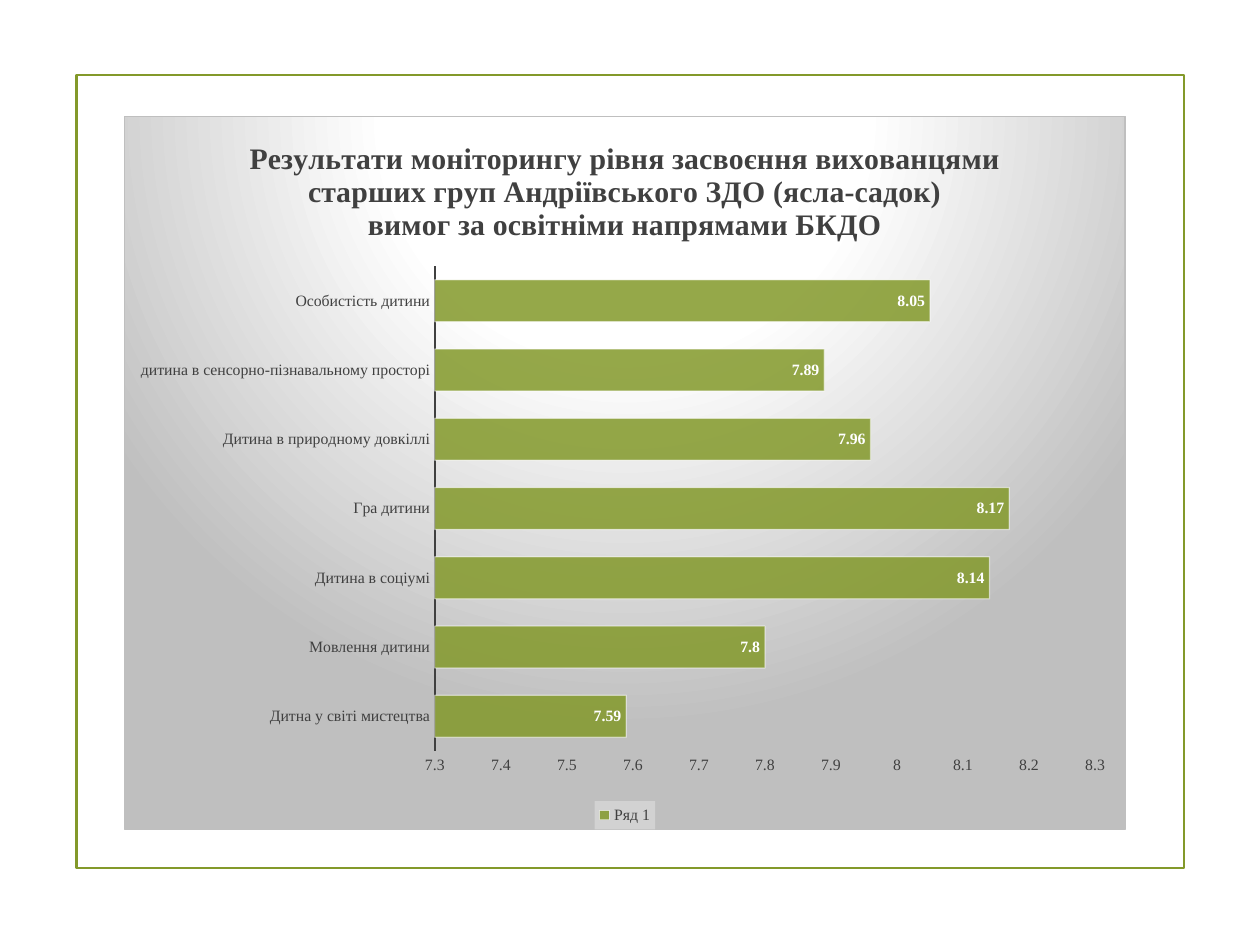
from dataclasses import dataclass

from lxml import etree
from pptx import Presentation
from pptx.chart.data import CategoryChartData
from pptx.dml.color import RGBColor
from pptx.enum.chart import XL_CHART_TYPE, XL_LABEL_POSITION, XL_LEGEND_POSITION, XL_TICK_MARK
from pptx.enum.shapes import MSO_SHAPE
from pptx.oxml import parse_xml
from pptx.oxml.ns import nsdecls, qn
from pptx.util import Pt

BAR = XL_CHART_TYPE.BAR_CLUSTERED
INSIDE_END = XL_LABEL_POSITION.INSIDE_END
BOTTOM = XL_LEGEND_POSITION.BOTTOM
NO_TICK = XL_TICK_MARK.NONE
RECTANGLE = MSO_SHAPE.RECTANGLE


@dataclass(frozen=True)
class Theme:
    font: str = "Times New Roman"
    green: str = "83992A"
    text: str = "404040"
    white: str = "FFFFFF"
    grey: str = "BFBFBF"
    legend: str = "F2F2F2"
    title_size: float = 17
    label_size: float = 9


THEME = Theme()

TITLE = (
    "Результати моніторингу рівня засвоєння вихованцями "
    "старших груп Андріївського ЗДО (ясла-садок)",
    "вимог за освітніми напрямами БКДО",
)
RESULTS = {
    "Дитна у світі мистецтва": 7.59,
    "Мовлення дитини": 7.8,
    "Дитина в соціумі": 8.14,
    "Гра дитини": 8.17,
    "Дитина в природному довкіллі": 7.96,
    "дитина в сенсорно-пізнавальному просторі": 7.89,
    "Особистість дитини": 8.05,
}


def style_text(target, text=None, size=THEME.label_size, color=THEME.text, bold=False):
    """Format anything with a font; when text is given, add it as a run first."""
    if text is not None:
        target = target.add_run()
        target.text = text
    font = target.font
    font.name = THEME.font
    font.size = Pt(size)
    font.bold = bold
    font.color.rgb = RGBColor.from_string(color)


def set_alpha(fill_parent, percent):
    color = next(fill_parent.iter(qn("a:srgbClr")))
    etree.SubElement(color, qn("a:alpha")).set("val", str(percent * 1000))


presentation = Presentation()
presentation.slide_width, presentation.slide_height = Pt(720), Pt(540)
slide = presentation.slides.add_slide(presentation.slide_layouts[6])

# Green border around the slide
border = slide.shapes.add_shape(RECTANGLE, Pt(43.7), Pt(42.8), Pt(633), Pt(453.3))
border.shadow.inherit = False
border.fill.background()
border.line.color.rgb = RGBColor.from_string(THEME.green)
border.line.width = Pt(1.25)

# Chart of monitoring results
data = CategoryChartData()
data.categories = list(RESULTS)
data.add_series("Ряд 1", list(RESULTS.values()))
chart = slide.shapes.add_chart(BAR, Pt(70.9), Pt(66.2), Pt(572.4), Pt(408.2), data).chart
style_text(chart, size=10)

chart.has_title = True
title_frame = chart.chart_title.text_frame
for index, line in enumerate(TITLE):
    paragraph = title_frame.add_paragraph() if index else title_frame.paragraphs[0]
    style_text(paragraph, line, size=THEME.title_size, bold=True)

chart.has_legend = True
chart.legend.position = BOTTOM
chart.legend.include_in_layout = False
style_text(chart.legend)

# Bars and their values
plot = chart.plots[0]
plot.gap_width = 65
plot.vary_by_categories = False
bars = plot.series[0]
bars.format.fill.solid()
bars.format.fill.fore_color.rgb = RGBColor.from_string(THEME.green)
bars.format.line.color.rgb = RGBColor.from_string(THEME.white)
bars.format.line.width = Pt(0.75)
bar_properties = bars.format.line._get_or_add_ln().getparent()
set_alpha(bar_properties.find(qn("a:solidFill")), 85)
set_alpha(bar_properties.find(qn("a:ln")), 50)
values = bars.data_labels
values.show_value = True
values.position = INSIDE_END
style_text(values, color=THEME.white, bold=True)

# Axes
for axis in (chart.category_axis, chart.value_axis):
    axis.major_tick_mark = axis.minor_tick_mark = NO_TICK
    axis.has_major_gridlines = False
    style_text(axis.tick_labels)
category_line = chart.category_axis.format.line
category_line.color.rgb = RGBColor.from_string(THEME.text)
category_line.width = Pt(1.5)
score_axis = chart.value_axis
score_axis.minimum_scale, score_axis.maximum_scale = 7.3, 8.3
score_axis.major_unit = 0.1
score_axis.format.line.fill.background()

# Plot position, legend fill and the chart's radial background
plot_area = chart._chartSpace.chart.plotArea
for layout in plot_area.findall(qn("c:layout")):
    plot_area.remove(layout)
plot_area.insert(0, parse_xml(
    f'<c:layout {nsdecls("c")}><c:manualLayout><c:layoutTarget val="inner"/>'
    '<c:xMode val="edge"/><c:yMode val="edge"/><c:x val="0.31"/><c:y val="0.21"/>'
    '<c:w val="0.66"/><c:h val="0.68"/></c:manualLayout></c:layout>'
))
legend_text = chart.legend._element.find(qn("c:txPr"))
legend_text.addprevious(parse_xml(
    f'<c:spPr {nsdecls("c", "a")}><a:solidFill><a:srgbClr val="{THEME.legend}">'
    '<a:alpha val="39000"/></a:srgbClr></a:solidFill></c:spPr>'
))
stops = "".join(
    f'<a:gs pos="{position * 1000}"><a:srgbClr val="{color}"/></a:gs>'
    for position, color in ((0, THEME.white), (39, THEME.white), (100, THEME.grey))
)
chart._chartSpace.chart.addnext(parse_xml(
    f'<c:spPr {nsdecls("c", "a")}><a:gradFill><a:gsLst>{stops}</a:gsLst>'
    '<a:path path="circle"><a:fillToRect l="50000" t="-80000" r="50000" b="180000"/></a:path>'
    f'</a:gradFill><a:ln w="{Pt(0.75)}"><a:solidFill><a:srgbClr val="{THEME.grey}"/>'
    '</a:solidFill></a:ln></c:spPr>'
))

presentation.save("out.pptx")
